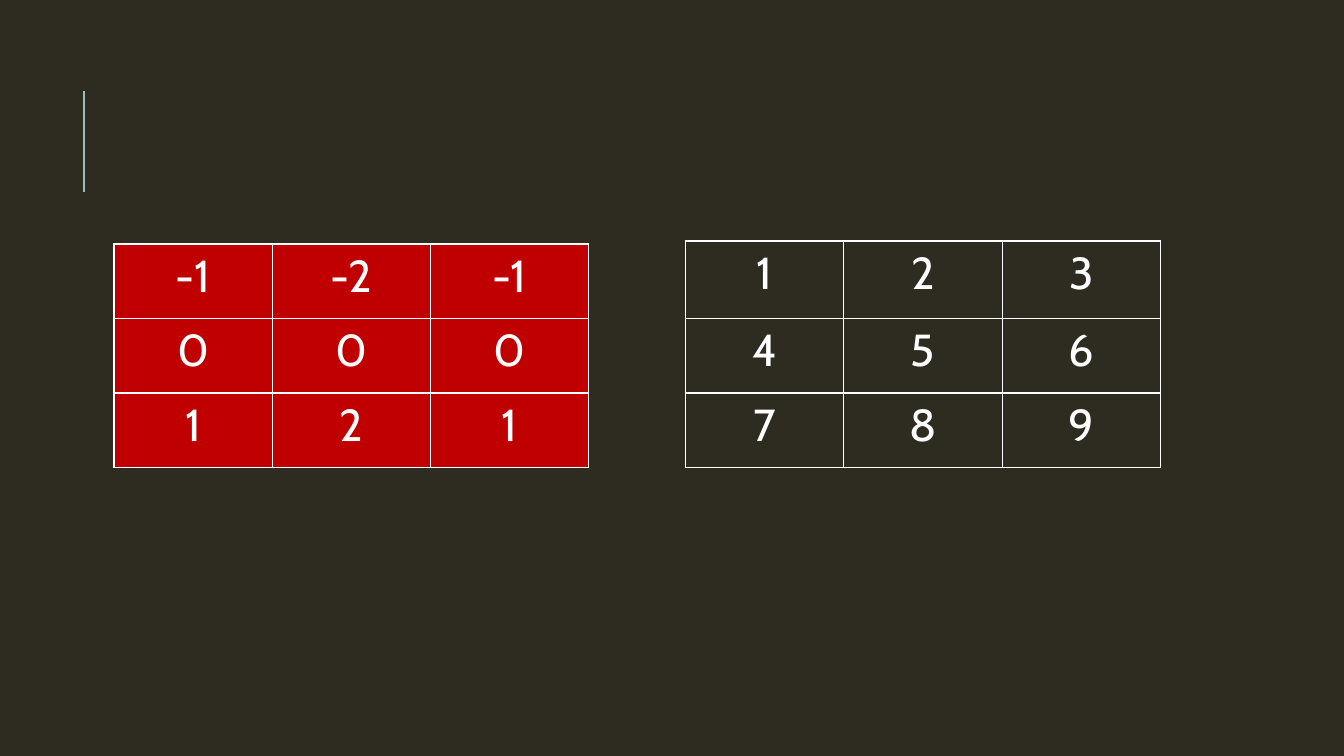
import pptx
import pptx.dml.color
import pptx.enum.shapes
import pptx.enum.text
import pptx.oxml
import pptx.oxml.ns
import pptx.util
from lxml import etree

COLORS = {
    "background": "2E2B21",
    "accent": "9CBEBD",
    "kernel": "C00000",
    "light": "FFFFFF",
}
FONT = "Cabin"
SLIDE_WIDTH = pptx.util.Inches(13.33)
SLIDE_HEIGHT = pptx.util.Inches(7.5)
COLUMN_WIDTH = pptx.util.Inches(1.57)
ROW_HEIGHT = pptx.util.Inches(0.74)
TABLE_BOTTOM = pptx.util.Inches(4.64)

KERNEL = [[-1, -2, -1], [0, 0, 0], [1, 2, 1]]
PIXELS = [[1, 2, 3], [4, 5, 6], [7, 8, 9]]


def color(name):
    return pptx.dml.color.RGBColor.from_string(COLORS[name])


def add_accent_line(page):
    x = pptx.util.Inches(0.83)
    line = page.shapes.add_connector(
        pptx.enum.shapes.MSO_CONNECTOR.STRAIGHT,
        x, pptx.util.Inches(1.9), x, pptx.util.Inches(0.9),
    )
    line.line.color.rgb = color("accent")
    line.line.width = pptx.util.Pt(1.5)
    etree.SubElement(line._element.spPr, pptx.oxml.ns.qn("a:effectLst"))


def add_borders(cell):
    """Draw all four borders; call before filling, as the schema puts lines first."""
    properties = cell._tc.get_or_add_tcPr()
    for side in ("lnL", "lnR", "lnT", "lnB"):
        border = etree.SubElement(
            properties, pptx.oxml.ns.qn(f"a:{side}"), w=str(pptx.util.Pt(1))
        )
        fill = etree.SubElement(border, pptx.oxml.ns.qn("a:solidFill"))
        etree.SubElement(fill, pptx.oxml.ns.qn("a:srgbClr"), val=COLORS["light"])


def format_cell(cell, value, fill_name):
    add_borders(cell)
    if fill_name:
        cell.fill.solid()
        cell.fill.fore_color.rgb = color(fill_name)
    else:
        cell.fill.background()
    cell.text = str(value)
    para = cell.text_frame.paragraphs[0]
    para.alignment = pptx.enum.text.PP_ALIGN.CENTER
    para.font.name = FONT
    para.font.size = pptx.util.Pt(32)
    para.font.bold = False
    para.font.color.rgb = color("light")


def add_matrix(page, left, values, first_row_height=ROW_HEIGHT, fill_name=None):
    """Add a number grid whose bottom edge sits at TABLE_BOTTOM."""
    heights = [first_row_height] + [ROW_HEIGHT] * (len(values) - 1)
    columns = len(values[0])
    table = page.shapes.add_table(
        len(values), columns, left, TABLE_BOTTOM - sum(heights),
        COLUMN_WIDTH * columns, sum(heights),
    ).table
    table.first_row = False
    table.horz_banding = False
    for column in table.columns:
        column.width = COLUMN_WIDTH
    for row, height, numbers in zip(table.rows, heights, values):
        row.height = height
        for cell, value in zip(row.cells, numbers):
            format_cell(cell, value, fill_name)


def main():
    deck = pptx.Presentation()
    deck.slide_width = SLIDE_WIDTH
    deck.slide_height = SLIDE_HEIGHT
    page = deck.slides.add_slide(deck.slide_layouts[6])
    page.background.fill.solid()
    page.background.fill.fore_color.rgb = color("background")

    add_accent_line(page)
    add_matrix(page, pptx.util.Inches(1.13), KERNEL, fill_name="kernel")
    add_matrix(page, pptx.util.Inches(6.8), PIXELS,
               first_row_height=pptx.util.Inches(0.77))
    deck.save("out.pptx")


if __name__ == "__main__":
    main()
